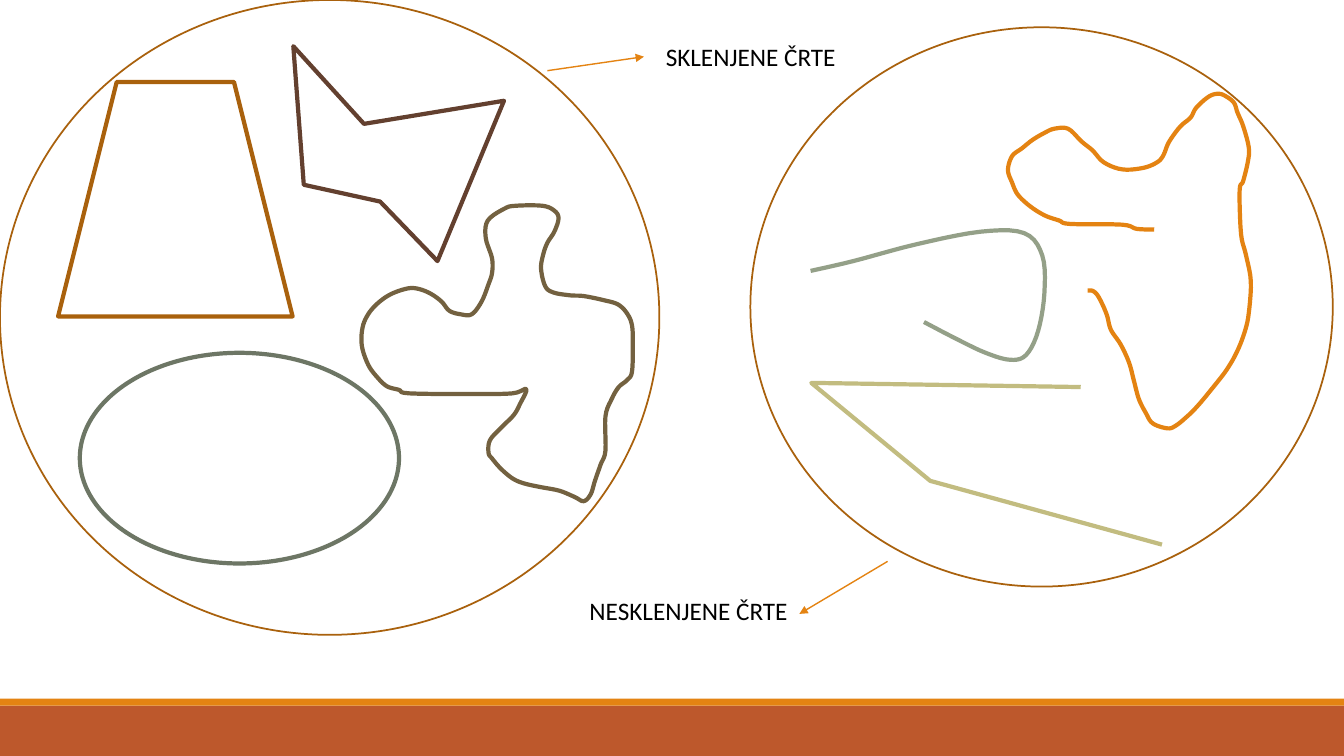
import pptx
import pptx.util
import pptx.dml.color
import pptx.enum.shapes
import pptx.enum.text
import pptx.oxml
import pptx.oxml.ns
from pptx.util import Pt

THEME = {
    "rust": "BD582C", "orange": "E48312", "brown": "A9610D", "gray": "6D7665",
    "maroon": "63402F", "sage": "94A088", "khaki": "C2BC80", "olive": "736140",
    "text": "000000", "font": "Calibri", "label_size": 18,
    "figure_line": 3, "set_line": 1.25, "arrow_line": 1,
}


def style(shape, fill=None, line=None, width=None):
    shape.shadow.inherit = False
    if fill:
        shape.fill.solid()
        shape.fill.fore_color.rgb = pptx.dml.color.RGBColor.from_string(THEME[fill])
    else:
        shape.fill.background()
    if line:
        shape.line.color.rgb = pptx.dml.color.RGBColor.from_string(THEME[line])
        shape.line.width = Pt(THEME[width])
    else:
        shape.line.fill.background()


def smooth(points, closed, steps=5):
    if closed:
        padded = [points[-1], *points, points[0], points[1]]
    else:
        padded = [points[0], *points, points[-1]]
    curve = [points[0]]
    for a, b, c, d in zip(padded, padded[1:], padded[2:], padded[3:]):
        for step in range(1, steps + 1):
            t = step / steps
            curve.append(tuple(
                q + t * (r - p) / 2 + t**2 * (2 * p - 5 * q + 4 * r - s) / 2
                + t**3 * (3 * q - p - 3 * r + s) / 2
                for p, q, r, s in zip(a, b, c, d)
            ))
    return curve


presentation = pptx.Presentation()
presentation.slide_width, presentation.slide_height = Pt(960), Pt(540)
slide = presentation.slides.add_slide(presentation.slide_layouts[6])
shapes = slide.shapes
kinds = pptx.enum.shapes.MSO_SHAPE

for kind, left, top, width, height, fill, line, line_width in [
    (kinds.RECTANGLE, 0, 504, 960, 36, "rust", None, None),
    (kinds.RECTANGLE, 0, 499, 960, 5, "orange", None, None),
    (kinds.TRAPEZOID, 41.5, 58.5, 167.5, 167.5, None, "brown", "figure_line"),
    (kinds.OVAL, 57, 252, 228, 150.5, None, "gray", "figure_line"),
    (kinds.OVAL, 0, 0, 471, 453.5, None, "brown", "set_line"),
    (kinds.OVAL, 536, 19.5, 416, 399.5, None, "brown", "set_line"),
]:
    shape = shapes.add_shape(kind, Pt(left), Pt(top), Pt(width), Pt(height))
    style(shape, fill, line, line_width)

closed_polygon = [(217, 132), (209.5, 33), (260, 88.5), (360, 72), (312.5, 186.5), (271.5, 144)]
open_polyline = [(772, 276.5), (579.5, 273.5), (664.5, 343.5), (830, 389)]
open_hook = [
    (660, 230), (683, 242), (704, 252), (721.5, 257), (733, 253.5), (741.5, 236.5),
    (746, 209.5), (744.5, 182.5), (731.5, 166.5), (700.5, 165.5), (654.5, 174.5),
    (609.5, 186.5), (579, 193.5),
]
closed_blob = [
    (376, 278), (366, 281), (337, 281.5), (292.5, 281), (285, 278.5), (276.5, 276),
    (269.5, 269.5), (263, 260.5), (258.5, 247), (259, 234), (263, 224.5), (270, 216.5),
    (279.5, 210), (291.5, 206), (299.5, 206.5), (308, 210), (315.5, 215.5), (321, 222),
    (329, 224.5), (337, 224.5), (344, 215.5), (349, 203), (351.5, 195), (351.5, 184.5),
    (347, 170), (348.5, 157.5), (360.5, 149), (368.5, 147), (387.5, 147), (396, 150.5),
    (399, 156), (396, 165.5), (391, 173.5), (388, 182), (386.5, 192), (389.5, 204.5),
    (395.5, 209), (407.5, 211), (417, 211.5), (431.5, 214.5), (441.5, 217.5), (448, 224),
    (451.5, 232.5), (452, 246), (451.5, 265.5), (448, 271.5), (442, 276.5), (437, 285),
    (432.5, 297.5), (432.5, 322), (429, 332), (425, 343.5), (422, 353), (417, 358),
    (410.5, 355), (399.5, 350.5), (386.5, 348), (375, 345.5), (366.5, 342), (358, 335),
    (351.5, 327.5), (349, 323.5), (350, 314.5), (358, 305.5), (367, 296.5), (371.5, 288.5),
]
open_squiggle = [
    (824.5, 164), (812, 163.5), (801.5, 160.5), (764.5, 160), (756.5, 157.5), (746.5, 154),
    (736, 147.5), (727, 139), (723, 130.5), (720, 121.5), (723, 111.5), (730, 106),
    (737.5, 100), (746, 95), (753, 92), (763, 92), (772.5, 101), (780.5, 107.5),
    (788.5, 116), (801.5, 121), (816.5, 120), (826.5, 116), (831, 111), (835, 101.5),
    (843, 90.5), (850.5, 84), (854.5, 77), (863.5, 69), (870.5, 67), (876, 69),
    (881.5, 73.5), (884, 80.5), (888, 90), (892, 105), (891.5, 115), (888, 129.5),
    (885.5, 136), (886.5, 167), (890, 182), (893.5, 201), (892, 224), (889, 237.5),
    (883.5, 251.5), (876, 264.5), (865.5, 278), (855.5, 290), (848, 297.5), (840, 304),
    (834, 306), (823.5, 302.5), (818.5, 295), (813.5, 285), (810, 272), (806.5, 259),
    (800.5, 246), (793.5, 235.5), (790.5, 224.5), (785, 212.5), (781, 208), (777, 207.5),
]

for points, closed, color in [
    (closed_polygon, True, "maroon"),
    (smooth(open_hook, False), False, "sage"),
    (open_polyline, False, "khaki"),
    (smooth(closed_blob, True), True, "olive"),
    (smooth(open_squiggle, False), False, "orange"),
]:
    vertices = [(Pt(x), Pt(y)) for x, y in points]
    builder = shapes.build_freeform(*vertices[0])
    builder.add_line_segments(vertices[1:], close=closed)
    style(builder.convert_to_shape(), None, color, "figure_line")

for start_x, start_y, end_x, end_y in [(391, 50.5, 460, 40.5), (634, 401, 571, 438.5)]:
    arrow = shapes.add_connector(
        pptx.enum.shapes.MSO_CONNECTOR.STRAIGHT, Pt(start_x), Pt(start_y), Pt(end_x), Pt(end_y)
    )
    arrow.line.color.rgb = pptx.dml.color.RGBColor.from_string(THEME["orange"])
    arrow.line.width = Pt(THEME["arrow_line"])
    head = pptx.oxml.parse_xml(f'<a:tailEnd {pptx.oxml.ns.nsdecls("a")} type="triangle"/>')
    arrow.line._get_or_add_ln().append(head)
    effects = pptx.oxml.parse_xml(f'<a:effectLst {pptx.oxml.ns.nsdecls("a")}/>')
    arrow._element.spPr.append(effects)

for label, left, top in [("SKLENJENE ČRTE", 468.5, 26), ("NESKLENJENE ČRTE", 414, 422)]:
    box = shapes.add_textbox(Pt(left), Pt(top), Pt(165.5), Pt(29))
    box.text_frame.word_wrap = True
    box.text_frame.auto_size = pptx.enum.text.MSO_AUTO_SIZE.SHAPE_TO_FIT_TEXT
    run = box.text_frame.paragraphs[0].add_run()
    run.text = label
    run.font.name = THEME["font"]
    run.font.size = Pt(THEME["label_size"])
    run.font.color.rgb = pptx.dml.color.RGBColor.from_string(THEME["text"])

presentation.save("out.pptx")
